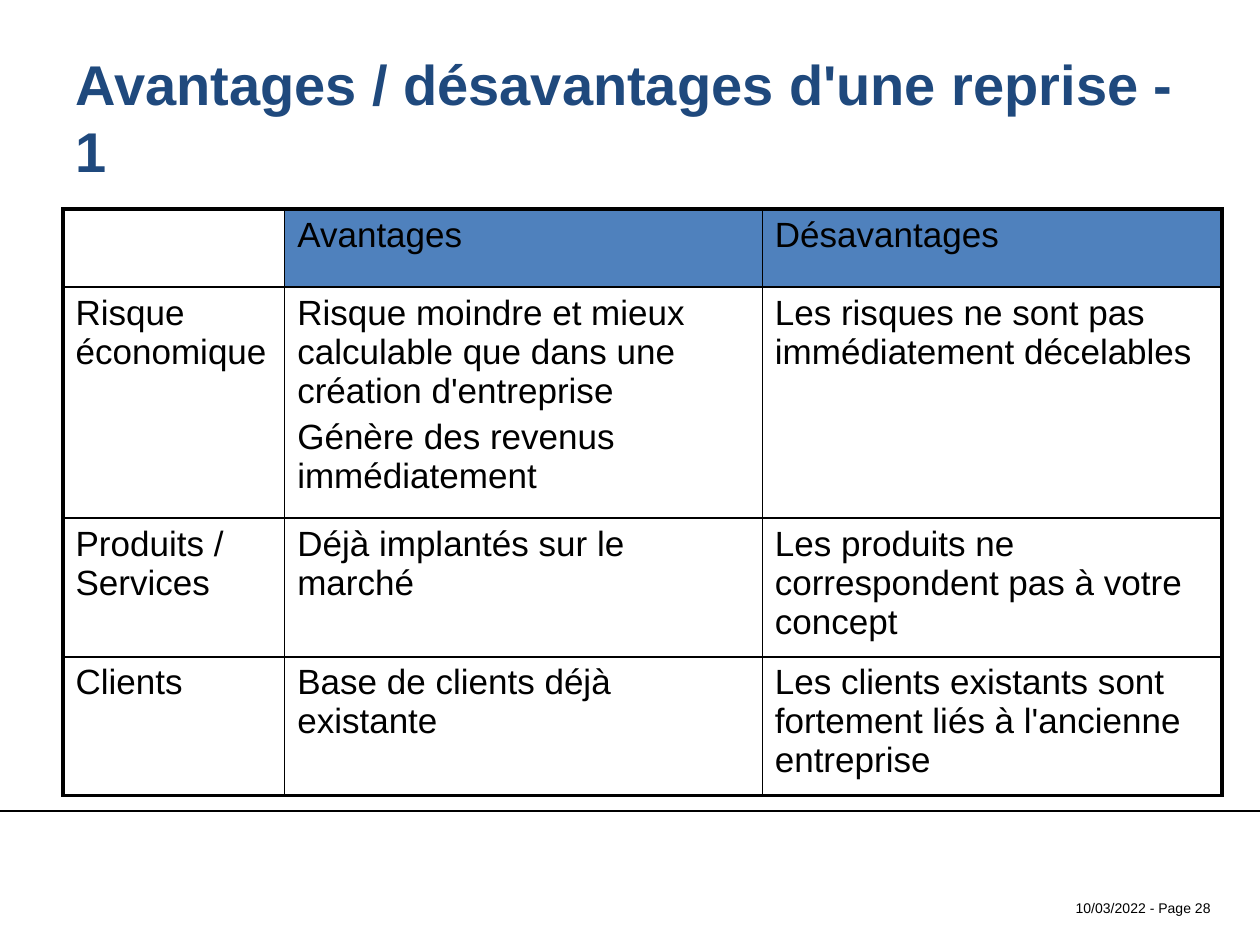
from dataclasses import dataclass

import lxml.etree
import pptx
import pptx.dml.color
import pptx.enum.shapes
import pptx.enum.text
import pptx.oxml
import pptx.oxml.ns
import pptx.util

Pt = pptx.util.Pt
FONT = "Arial"
COLORS = {"text": "000000", "title": "1F497D", "header": "4F81BD", "line": "000000"}
COLUMN_WIDTHS = (126.7, 272.9, 262.8)
THIN, THICK = 1, 2.25


@dataclass
class Row:
    height: float
    cells: tuple[str, str, str]
    header: bool = False


ROWS = [
    Row(44.6, ("", "Avantages", "Désavantages"), header=True),
    Row(132, (
        "Risque économique",
        "Risque moindre et mieux calculable que dans une création d'entreprise\n"
        "Génère des revenus immédiatement",
        "Les risques ne sont pas immédiatement décelables",
    )),
    Row(79.2, (
        "Produits / Services",
        "Déjà implantés sur le marché",
        "Les produits ne correspondent pas à votre concept",
    )),
    Row(79.2, (
        "Clients",
        "Base de clients déjà existante",
        "Les clients existants sont fortement liés à l'ancienne entreprise",
    )),
]


def rgb(name: str) -> pptx.dml.color.RGBColor:
    return pptx.dml.color.RGBColor.from_string(COLORS[name])


def set_font(p, size: float, color: str = "text", bold: bool = False) -> None:
    p.font.name = FONT
    p.font.size = Pt(size)
    p.font.bold = bold
    p.font.color.rgb = rgb(color)


def add_border(cell, side: str, width: float) -> None:
    cell._tc.get_or_add_tcPr().append(pptx.oxml.parse_xml(
        f'<a:ln{side} {pptx.oxml.ns.nsdecls("a")} w="{Pt(width)}">'
        f'<a:solidFill><a:srgbClr val="{COLORS["line"]}"/></a:solidFill></a:ln{side}>'
    ))


def format_cell(cell, text: str, header: bool, outer: dict[str, bool]) -> None:
    for side, is_outer in outer.items():
        add_border(cell, side, THICK if is_outer else THIN)
    if header and text:
        cell.fill.solid()
        cell.fill.fore_color.rgb = rgb("header")
    else:
        cell.fill.background()
    cell.text = text
    for i, p in enumerate(cell.text_frame.paragraphs):
        p.space_before = Pt(4 if i else 0)
        set_font(p, 20)


def add_title(s, text: str) -> None:
    sp = s.shapes.title
    sp.left, sp.top, sp.width, sp.height = Pt(36), Pt(21.6), Pt(669), Pt(90)
    tf = sp.text_frame
    tf.text = text
    tf.word_wrap = True
    tf.vertical_anchor = pptx.enum.text.MSO_ANCHOR.MIDDLE
    p = tf.paragraphs[0]
    p.alignment = pptx.enum.text.PP_ALIGN.LEFT
    set_font(p, 32, "title", bold=True)


def add_comparison(s, rows: list[Row]) -> None:
    table = s.shapes.add_table(
        len(rows), len(COLUMN_WIDTHS), Pt(36), Pt(119.5),
        Pt(sum(COLUMN_WIDTHS)), Pt(sum(row.height for row in rows)),
    ).table
    table.first_row = table.horz_banding = False
    for column, width in zip(table.columns, COLUMN_WIDTHS):
        column.width = Pt(width)
    for r, row in enumerate(rows):
        table.rows[r].height = Pt(row.height)
        for c, text in enumerate(row.cells):
            outer = {
                "L": c == 0,
                "R": c == len(COLUMN_WIDTHS) - 1,
                "T": r == 0,
                "B": r == len(rows) - 1,
            }
            format_cell(table.cell(r, c), text, row.header, outer)


def add_footer(s, text: str) -> None:
    line = s.shapes.add_connector(
        pptx.enum.shapes.MSO_CONNECTOR.STRAIGHT, Pt(0), Pt(463.5), Pt(720), Pt(463.5)
    )
    line.line.color.rgb = rgb("line")
    line.line.width = Pt(0.75)
    lxml.etree.SubElement(line._element.spPr, pptx.oxml.ns.qn("a:effectLst"))
    tf = s.shapes.add_textbox(Pt(600.5), Pt(510.5), Pt(98.6), Pt(16.6)).text_frame
    tf.auto_size = pptx.enum.text.MSO_AUTO_SIZE.SHAPE_TO_FIT_TEXT
    tf.word_wrap = False
    tf.text = text
    p = tf.paragraphs[0]
    p.alignment = pptx.enum.text.PP_ALIGN.RIGHT
    set_font(p, 8)


def main() -> None:
    prs = pptx.Presentation()
    prs.slide_width, prs.slide_height = Pt(720), Pt(540)
    s = prs.slides.add_slide(prs.slide_layouts[5])
    add_footer(s, "10/03/2022 - Page 28")
    add_comparison(s, ROWS)
    add_title(s, "Avantages / désavantages d'une reprise - 1")
    prs.save("out.pptx")


if __name__ == "__main__":
    main()
